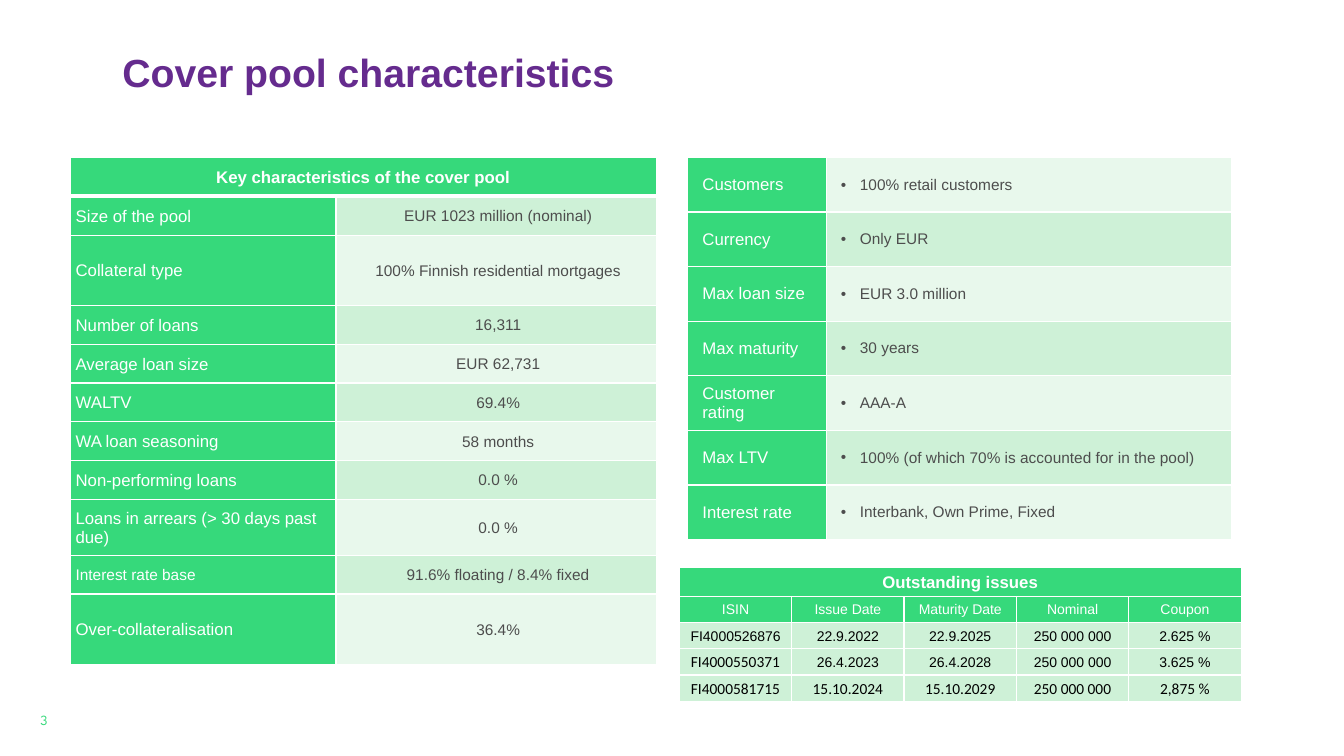
from dataclasses import dataclass, replace
from lxml.etree import SubElement as Sub
from pptx import Presentation
from pptx.dml.color import RGBColor
from pptx.enum.text import MSO_ANCHOR as Anchor, MSO_AUTO_SIZE as Auto, PP_ALIGN as Align
from pptx.oxml.ns import qn
from pptx.util import Emu, Pt

GREEN, MINT, PALE = "36D97B", "CEF1D7", "E8F8EC"
WHITE, GREY, BLACK, PLUM = "FFFFFF", "4D4D4D", "000000", "652B8E"


@dataclass(frozen=True)
class Style:
    size: int
    color: str
    fill: str = GREEN
    face: str = "Arial"
    bold: bool = False
    align: Align = Align.LEFT
    left: int = 0
    hang: int = 0
    bullet: bool = False


@dataclass(frozen=True)
class Cell:
    text: str
    style: Style


@dataclass(frozen=True)
class Grid:
    left: int
    top: int
    cols: list[int]
    rows: list[int]
    cells: list[list[Cell]]
    inset: tuple[int, int, int, int]
    title: bool = False
    rule: int = 1


def px(num: int) -> Emu:
    return Emu(num * 9525)


def rgb(code: str) -> RGBColor:
    return RGBColor.from_string(code)


def write(frame, text: str, style: Style) -> None:
    para = frame.paragraphs[0]
    para.text = text
    para.alignment = style.align
    props = para._p.get_or_add_pPr()
    props.set("marL", str(px(style.left)))
    props.set("indent", str(px(-style.hang)))
    if style.bullet:
        Sub(props, qn("a:buFont")).set("typeface", "Arial")
        Sub(props, qn("a:buChar")).set("char", "•")
    font = para.font
    font.size, font.name, font.bold = Pt(style.size), style.face, style.bold
    font.color.rgb = rgb(style.color)


def border(cell, top: int, base: int) -> None:
    props = cell._tc.get_or_add_tcPr()
    for side, width in zip("LRTB", (1, 1, top, base)):
        line = Sub(props, qn(f"a:ln{side}"))
        line.set("w", str(Pt(width)))
        Sub(Sub(line, qn("a:solidFill")), qn("a:srgbClr")).set("val", WHITE)


def draw(slide, grid: Grid) -> None:
    size = px(sum(grid.cols)), px(sum(grid.rows))
    table = slide.shapes.add_table(
        len(grid.rows), len(grid.cols), px(grid.left), px(grid.top), *size).table
    table.first_row = table.horz_banding = False
    for col, width in zip(table.columns, grid.cols):
        col.width = px(width)
    for row, height in zip(table.rows, grid.rows):
        row.height = px(height)
    for r in range(len(grid.rows)):
        for c in range(len(grid.cols)):
            cell = table.cell(r, c)
            border(cell, grid.rule if r == 1 else 1, grid.rule if r == 0 else 1)
            cell.fill.solid()
            cell.fill.fore_color.rgb = rgb(GREEN)
    if grid.title:
        table.cell(0, 0).merge(table.cell(0, len(grid.cols) - 1))
    for r, items in enumerate(grid.cells):
        for c, item in enumerate(items):
            cell = table.cell(r, c)
            cell.fill.fore_color.rgb = rgb(item.style.fill)
            cell.vertical_anchor = Anchor.MIDDLE
            (cell.margin_left, cell.margin_top,
             cell.margin_right, cell.margin_bottom) = map(px, grid.inset)
            write(cell.text_frame, item.text, item.style)


def place(shape, left: int, top: int, width: int, height: int) -> None:
    shape.left, shape.top, shape.width, shape.height = map(px, (left, top, width, height))
    frame = shape.text_frame
    frame.word_wrap, frame.auto_size = True, Auto.NONE
    frame.vertical_anchor = Anchor.MIDDLE


HEAD = Style(12, WHITE, bold=True, align=Align.CENTER)
LABEL = Style(12, WHITE, left=4)
VALUE = Style(11, GREY, align=Align.CENTER, left=4)
POINT = Style(11, GREY, left=22, hang=18, bullet=True)
FIELD = Style(10, WHITE, align=Align.CENTER)
DATA = replace(FIELD, color=BLACK, fill=MINT)
ALT = replace(DATA, size=11, face="Calibri")
TIGHT = (1, 1, 1, 0)

POOL = [
    ("Size of the pool", "EUR 1023 million (nominal)"),
    ("Collateral type", "100% Finnish residential mortgages"),
    ("Number of loans", "16,311"),
    ("Average loan size", "EUR 62,731"),
    ("WALTV", "69.4%"),
    ("WA loan seasoning", "58 months"),
    ("Non-performing loans", "0.0 %"),
    ("Loans in arrears (> 30 days past due)", "0.0 %"),
    ("Interest rate base", "91.6% floating / 8.4% fixed"),
    ("Over-collateralisation", "36.4%"),
]
TERMS = [
    ("Customers", "100% retail customers"),
    ("Currency", "Only EUR"),
    ("Max loan size", "EUR 3.0 million"),
    ("Max maturity", "30 years"),
    ("Customer rating", "AAA-A"),
    ("Max LTV", "100% (of which 70% is accounted for in the pool)"),
    ("Interest rate", "Interbank, Own Prime, Fixed"),
]
ISSUES = [
    ("ISIN", "Issue Date", "Maturity Date", "Nominal", "Coupon"),
    ("FI4000526876", "22.9.2022", "22.9.2025", "250 000 000", "2.625 %"),
    ("FI4000550371", "26.4.2023", "26.4.2028", "250 000 000", "3.625 %"),
    ("FI4000581715", "15.10.2024", "15.10.2029", "250 000 000", "2,875 %"),
]


def pairs(data: list[tuple[str, str]], style: Style, fills: tuple[str, str]) -> list[list[Cell]]:
    return [[Cell(name, replace(LABEL, size=11) if name == "Interest rate base" else LABEL),
             Cell(text, replace(style, fill=fills[i % 2]))]
            for i, (name, text) in enumerate(data)]


def issues() -> list[list[Cell]]:
    looks = [[FIELD] * 5, [DATA] * 5, [ALT] + [DATA] * 4, [ALT] * 5]
    return [[Cell(text, look) for text, look in zip(row, line)]
            for row, line in zip(ISSUES, looks)]


def main() -> None:
    deck = Presentation()
    deck.slide_width, deck.slide_height = px(1280), px(720)
    slide = deck.slides.add_slide(deck.slide_layouts[5])
    title = slide.shapes.title
    place(title, 107, 36, 1067, 71)
    write(title.text_frame, "Cover pool characteristics", Style(28, PLUM, bold=True))
    title.text_frame.paragraphs[0].line_spacing = 0.9
    page = slide.shapes.add_textbox(0, 0, 0, 0)
    place(page, 29, 670, 37, 31)
    write(page.text_frame, "3", Style(10, GREEN, face="League Spartan"))
    draw(slide, Grid(655, 150, [132, 386], [52] * 7,
                     pairs(TERMS, POINT, (PALE, MINT)), (10, 5, 10, 5)))
    draw(slide, Grid(67, 150, [253, 305], [37, 37, 67] + [37] * 5 + [53, 37, 67],
                     [[Cell("Key characteristics of the cover pool", HEAD)]]
                     + pairs(POOL, VALUE, (MINT, PALE)), TIGHT, True, 3))
    draw(slide, Grid(647, 540, [107] * 5, [28] + [25] * 4,
                     [[Cell("Outstanding issues", HEAD)]] + issues(), TIGHT, True))
    deck.save("out.pptx")


if __name__ == "__main__":
    main()
